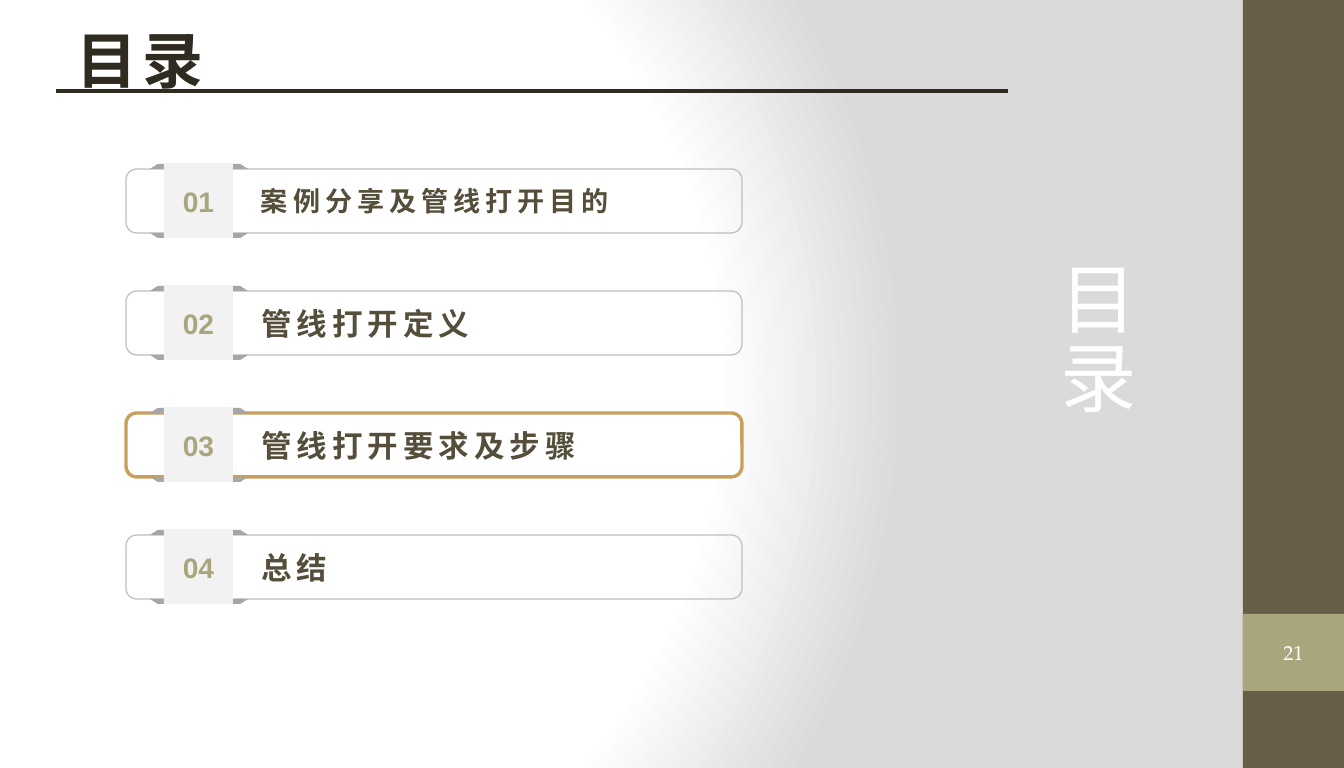
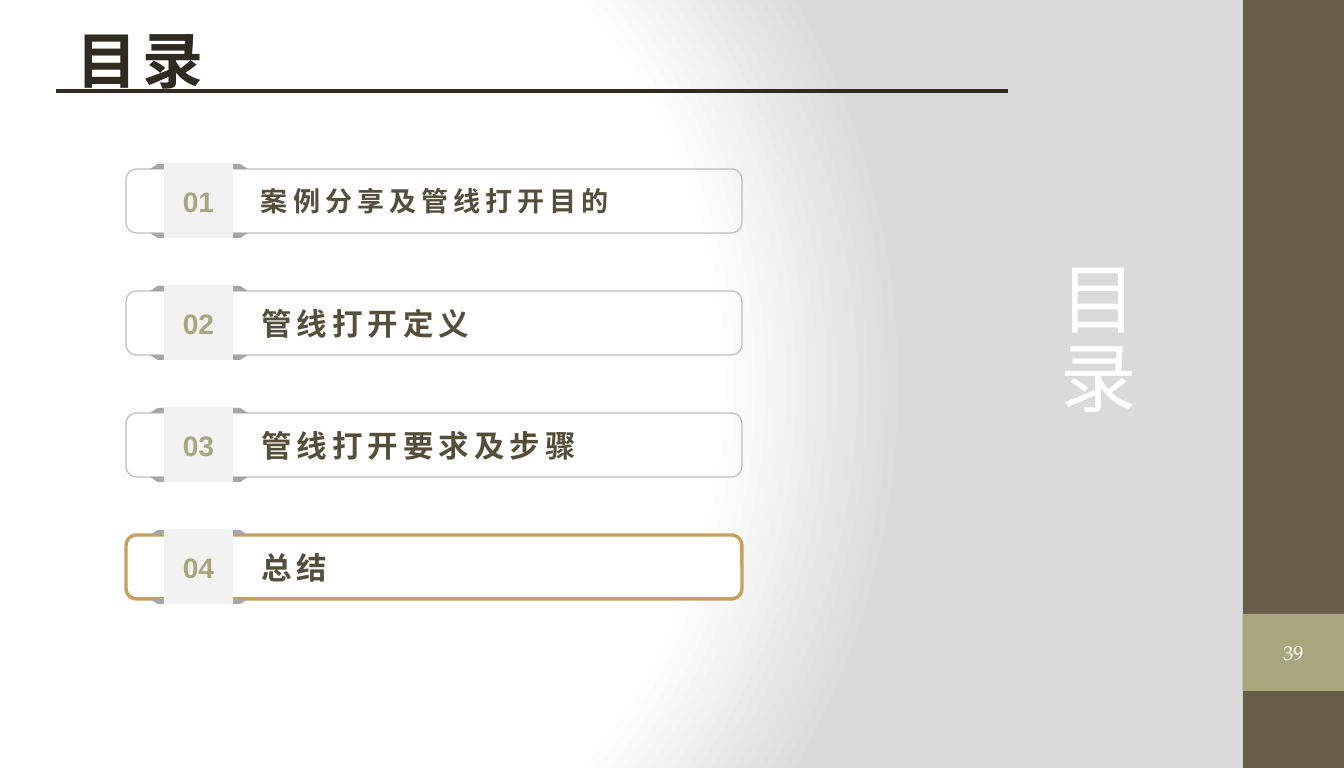
from lxml.etree import SubElement
from pptx import Presentation
from pptx.dml.color import RGBColor
from pptx.enum.shapes import MSO_CONNECTOR, MSO_SHAPE
from pptx.enum.text import MSO_ANCHOR, PP_ALIGN
from pptx.oxml.ns import qn
from pptx.util import Pt

PIXEL = 914400 / 122
WIDTH, HEIGHT = 1344, 768

WHITE = RGBColor(0xFF, 0xFF, 0xFF)
BACKDROP_GREY = RGBColor(0xDA, 0xDA, 0xDA)
BAND_BROWN = RGBColor(0x67, 0x5E, 0x47)
OLIVE = RGBColor(0xA9, 0xA5, 0x7C)
TITLE_DARK = RGBColor(0x2F, 0x2B, 0x20)
ITEM_BROWN = RGBColor(0x55, 0x4E, 0x3A)
OUTLINE_GREY = RGBColor(0xBF, 0xBF, 0xBF)
FOLD_GREY = RGBColor(0xA6, 0xA6, 0xA6)
TAB_GREY = RGBColor(0xF2, 0xF2, 0xF2)
HIGHLIGHT_GOLD = RGBColor(0xC8, 0x9F, 0x5D)

HAN_FONT = "Noto Sans CJK SC"
TITLE_FONT = {"name": HAN_FONT, "size": Pt(36), "bold": True}
SIDE_FONT = {"name": "Arial", "size": Pt(45), "bold": False}
NUMBER_FONT = {"name": "Arial", "size": Pt(16.6), "bold": True}
PAGE_FONT = {"name": "TeX Gyre Pagella", "size": Pt(12), "bold": False}

ROW_PITCH = 122
AGENDA = [
    ("案例分享及管线打开目的", 16, 393),
    ("管线打开定义", 18, 355),
    ("管线打开要求及步骤", 18, 355),
    ("总结", 18, 355),
]


def px(length):
    """Convert pixels to EMU."""
    return round(length * PIXEL)


def assign(target, values):
    """Set each attribute of the target from a dict."""
    for name, value in values.items():
        setattr(target, name, value)


class AgendaDeck:
    """Hold the deck style and the current slide."""

    def __init__(self):
        """Create the presentation and its shared backdrop."""
        self.presentation = Presentation()
        assign(self.presentation, {"slide_width": px(WIDTH), "slide_height": px(HEIGHT)})
        self.slide = None
        self.backdrop()

    def backdrop(self):
        """Give the master a circular gradient."""
        master = self.presentation.slide_master
        master.background.fill.gradient()
        gradient = master.element.find(".//" + qn("a:gradFill"))
        for child in list(gradient):
            gradient.remove(child)
        stops = SubElement(gradient, qn("a:gsLst"))
        for position, color in ((0, WHITE), (75, WHITE), (100, BACKDROP_GREY)):
            stop = SubElement(stops, qn("a:gs"), pos=str(position * 1000))
            SubElement(stop, qn("a:srgbClr"), val=str(color))
        circle = SubElement(gradient, qn("a:path"), path="circle")
        SubElement(circle, qn("a:fillToRect"), l="20000", t="50000", r="100000", b="50000")

    def shape(self, kind, box, fill=None, line=None, line_width=0.75):
        """Add a preset shape."""
        shape = self.slide.shapes.add_shape(kind, *map(px, box))
        shape.shadow.inherit = False
        for paint, color in ((shape.fill, fill), (shape.line.fill, line)):
            if color is None:
                paint.background()
            else:
                paint.solid()
                paint.fore_color.rgb = color
        if line is not None:
            shape.line.width = Pt(line_width)
        return shape

    def label(self, shape, text, font, color, align=PP_ALIGN.LEFT, spacing=0, inset=(12, 6)):
        """Put one styled paragraph in a shape."""
        across, down = map(px, inset)
        frame = shape.text_frame
        assign(frame, {
            "word_wrap": True, "vertical_anchor": MSO_ANCHOR.MIDDLE,
            "margin_left": across, "margin_right": across,
            "margin_top": down, "margin_bottom": down,
        })
        paragraph = frame.paragraphs[0]
        paragraph.alignment = align
        run = paragraph.add_run()
        run.text = text
        assign(run.font, font)
        run.font.color.rgb = color
        if spacing:
            properties = shape.element.find(".//" + qn("a:rPr"))
            properties.set("lang", "zh-CN")
            properties.set("spc", str(spacing * 100))
            SubElement(properties, qn("a:ea"), typeface=HAN_FONT)
        return paragraph

    def textbox(self, box, text, font, color, **style):
        """Add a text box and return it with its paragraph."""
        shape = self.slide.shapes.add_textbox(*map(px, box))
        return shape, self.label(shape, text, font, color, **style)

    def rule(self, left, right, top):
        """Add the line below the title."""
        line = self.slide.shapes.add_connector(
            MSO_CONNECTOR.STRAIGHT, px(left), px(top), px(right), px(top))
        line.line.color.rgb = TITLE_DARK
        line.line.width = Pt(2.25)
        SubElement(line.element.spPr, qn("a:effectLst"))

    def frame(self, page):
        """Add the side band, page number and title rule."""
        layout = self.presentation.slide_layouts[6]
        self.slide = self.presentation.slides.add_slide(layout)
        self.shape(MSO_SHAPE.RECTANGLE, (1243, 0, 101, HEIGHT), BAND_BROWN)
        box = self.shape(MSO_SHAPE.RECTANGLE, (1243, 614, 101, 77), OLIVE)
        self.label(box, str(page), PAGE_FONT, WHITE, align=PP_ALIGN.CENTER)
        self.rule(56, 1008, 91)

    def agenda_row(self, number, text, size, width, current):
        """Add a numbered card with folded tab edges."""
        top = 164 + (number - 1) * ROW_PITCH
        card = (126, top + 5, 616, 64)
        if current:
            self.shape(MSO_SHAPE.ROUNDED_RECTANGLE, card, WHITE, HIGHLIGHT_GOLD, 2)
        else:
            self.shape(MSO_SHAPE.ROUNDED_RECTANGLE, card, line=OUTLINE_GREY)
        for offset, rotation in ((69, 180), (0, 0)):
            fold = self.shape(MSO_SHAPE.TRAPEZOID, (150, top + offset, 98, 5), FOLD_GREY)
            fold.adjustments[0] = 1.55
            fold.rotation = rotation
        tab = self.shape(MSO_SHAPE.RECTANGLE, (164, top, 69, 74), TAB_GREY)
        self.label(tab, f"{number:02}", NUMBER_FONT, OLIVE,
                   align=PP_ALIGN.CENTER, inset=(10, 5))
        item_font = {"name": "Arial", "size": Pt(size), "bold": True}
        self.textbox((249, top + 10, width, 54), text, item_font, ITEM_BROWN, spacing=3)

    def side_title(self, text):
        """Add the vertical title."""
        shape, _ = self.textbox((1035, 254, 122, 194), text, SIDE_FONT, WHITE,
                                align=PP_ALIGN.JUSTIFY, spacing=2)
        shape.element.find(".//" + qn("a:bodyPr")).set("vert", "eaVert")

    def title(self, text):
        """Add the slide title."""
        _, paragraph = self.textbox((68, 26, 1149, 51), text, TITLE_FONT, TITLE_DARK,
                                    spacing=3, inset=(9, 5))
        assign(paragraph, {"line_spacing": 1.2, "space_after": Pt(3)})

    def agenda_slide(self, page, current):
        """Build an agenda slide with one highlighted row."""
        self.frame(page)
        for number, item in enumerate(AGENDA, 1):
            self.agenda_row(number, *item, number == current)
        self.side_title("目录")
        self.title("目录")


def main():
    """Build and save the deck."""
    deck = AgendaDeck()
    for page, current in ((21, 3), (39, 4)):
        deck.agenda_slide(page, current)
    deck.presentation.save("out.pptx")


if __name__ == "__main__":
    main()
